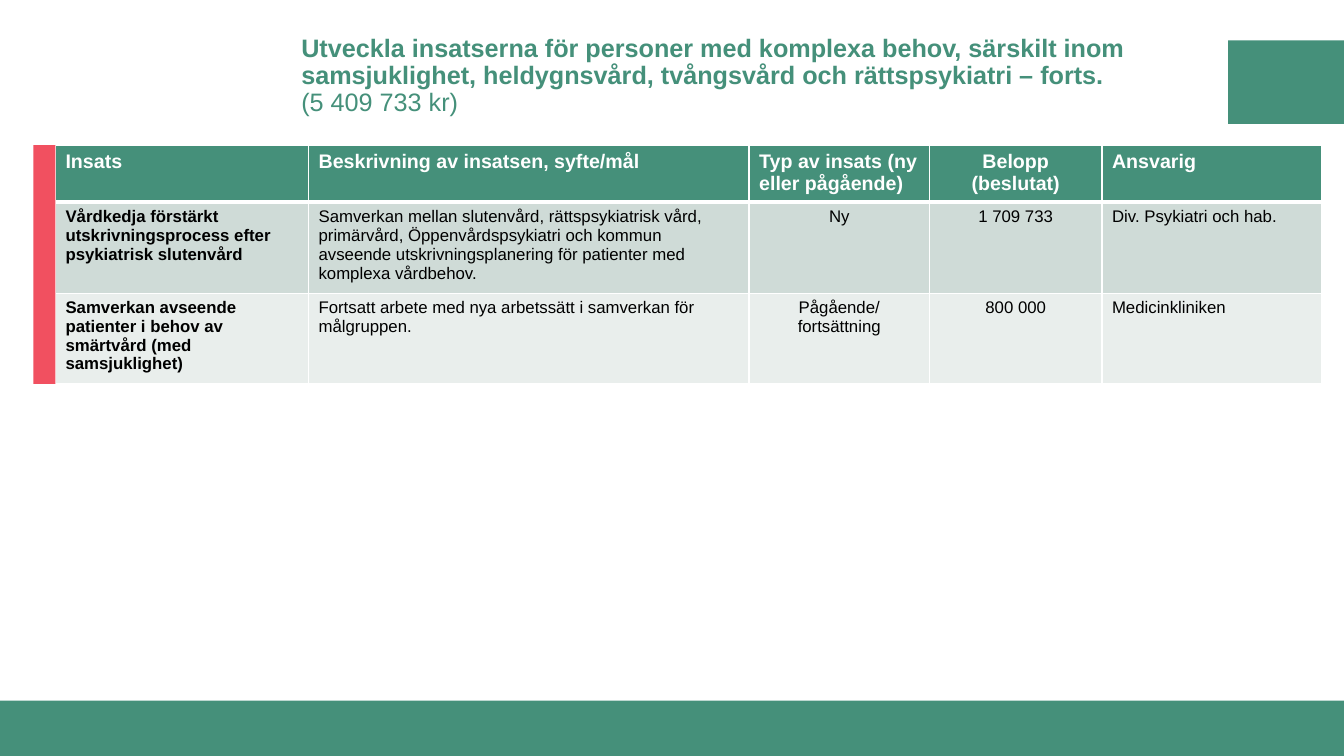
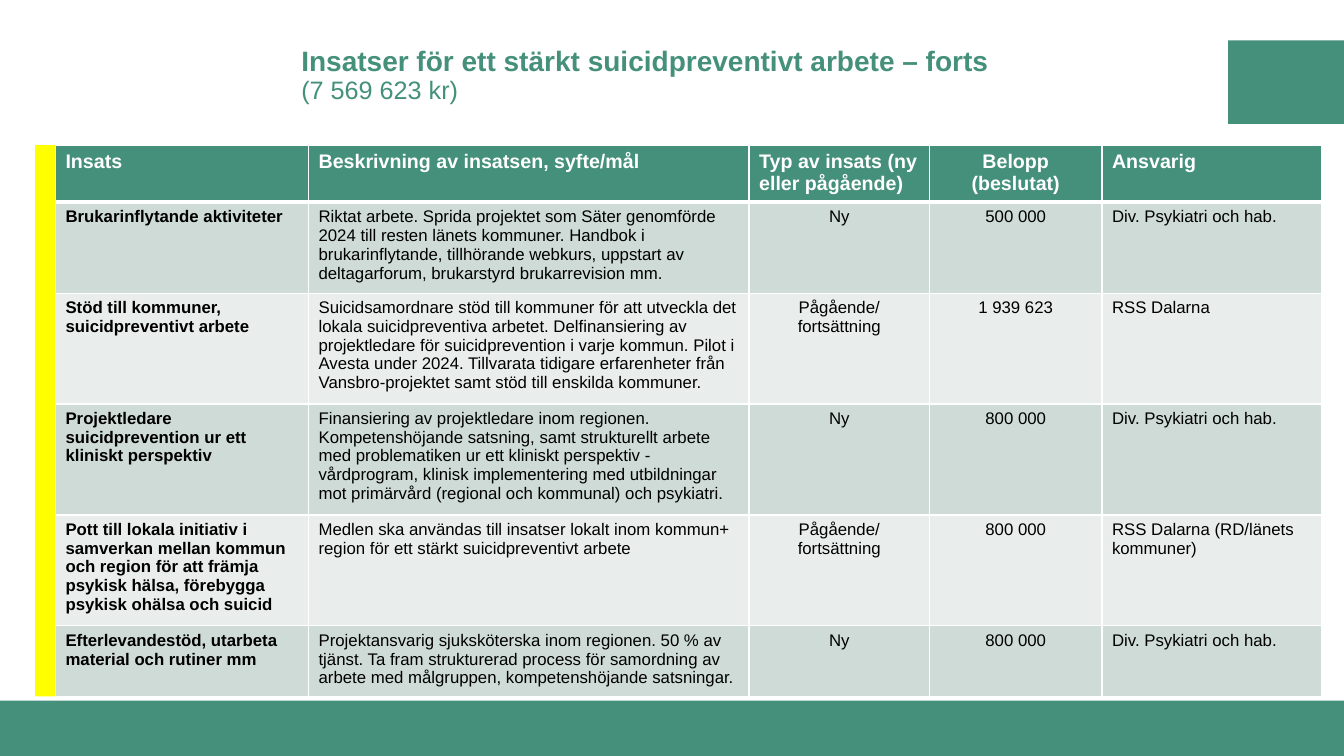
from pptx import Presentation
from pptx.dml.color import RGBColor
from pptx.enum.shapes import MSO_SHAPE as Shape
from pptx.enum.text import MSO_ANCHOR as Anchor, PP_ALIGN as Align
from pptx.oxml import parse_xml
from pptx.oxml.ns import nsdecls
from pptx.util import Inches, Pt

GREEN = RGBColor(0x45, 0x90, 0x7A)
RED = RGBColor(0xF1, 0x50, 0x60)
YELLOW = RGBColor(0xFF, 0xFF, 0x00)
DARK_ROW = RGBColor(0xCF, 0xDB, 0xD7)
LIGHT_ROW = RGBColor(0xE9, 0xEE, 0xEC)
WHITE = RGBColor(0xFF, 0xFF, 0xFF)
BLACK = RGBColor(0x00, 0x00, 0x00)

# Table layout shared by both slides
TABLE_LEFT, TABLE_TOP = 0.55, 1.44
COLUMN_WIDTHS = [2.51, 4.37, 1.79, 1.71, 2.18]
HEADER_HEIGHT = 0.54
HEADERS = ["Insats", "Beskrivning av insatsen, syfte/mål",
           "Typ av insats (ny eller pågående)", "Belopp (beslutat)", "Ansvarig"]
HEADER_CENTERED = {3}
BODY_CENTERED = {2, 3}

NEW = "Ny"
ONGOING = "Pågående/ fortsättning"
PSYCHIATRY = "Div. Psykiatri och hab."


class Report:
    """Holds the deck, its style and the current page."""

    font_name = "Arial"

    def __init__(self):
        self.deck = Presentation()
        self.deck.slide_width = Inches(13.33)
        self.deck.slide_height = Inches(7.5)
        self.page = None

    def add_page(self):
        self.page = self.deck.slides.add_slide(self.deck.slide_layouts[6])
        # Corner block and footer band
        self.add_block(12.18, 0.4, 1.15, 0.83, GREEN)
        self.add_block(0, 6.95, 13.33, 0.55, GREEN)

    def add_block(self, left, top, width, height, color):
        block = self.page.shapes.add_shape(
            Shape.RECTANGLE, Inches(left), Inches(top), Inches(width), Inches(height))
        block.shadow.inherit = False
        block.fill.solid()
        block.fill.fore_color.rgb = color
        block.line.fill.background()

    def add_span(self, para, text, color, **formats):
        span = para.add_run()
        span.text = text
        span.font.color.rgb = color
        for name, value in {"name": self.font_name, **formats}.items():
            setattr(span.font, name, value)

    def add_title(self, title, amount, size):
        box = self.page.shapes.add_textbox(
            Inches(2.89), Inches(0.28), Inches(9.2), Inches(0.95))
        frame = box.text_frame
        frame.word_wrap = True
        frame.vertical_anchor = Anchor.MIDDLE
        para = frame.paragraphs[0]
        para.line_spacing = 0.9
        self.add_span(para, title, GREEN, size=Pt(size), bold=True)
        para.add_line_break()
        self.add_span(para, amount, GREEN, size=Pt(18), bold=False)

    def add_borders(self, cell, top, bottom):
        properties = cell._tc.get_or_add_tcPr()
        for side, points in {"L": 1, "R": 1, "T": top, "B": bottom}.items():
            properties.append(parse_xml(
                f'<a:ln{side} {nsdecls("a")} w="{Pt(points)}"><a:solidFill>'
                f'<a:srgbClr val="{WHITE}"/></a:solidFill></a:ln{side}>'))

    def fill_cell(self, cell, text, fill, color, centered, **formats):
        cell.fill.solid()
        cell.fill.fore_color.rgb = fill
        para = cell.text_frame.paragraphs[0]
        para.alignment = Align.CENTER if centered else Align.LEFT
        self.add_span(para, text, color, **formats)

    def add_table(self, rows, row_heights):
        heights = [HEADER_HEIGHT, *row_heights]
        table = self.page.shapes.add_table(
            len(heights), len(HEADERS), Inches(TABLE_LEFT), Inches(TABLE_TOP),
            Inches(sum(COLUMN_WIDTHS)), Inches(sum(heights))).table
        for column, width in zip(table.columns, COLUMN_WIDTHS):
            column.width = Inches(width)
        for row, height in zip(table.rows, heights):
            row.height = Inches(height)
        for i, texts in enumerate([HEADERS, *rows]):
            for j, text in enumerate(texts):
                cell = table.cell(i, j)
                self.add_borders(cell, 3 if i == 1 else 1, 3 if i == 0 else 1)
                if i == 0:
                    self.fill_cell(cell, text, GREEN, WHITE, j in HEADER_CENTERED,
                                   size=Pt(14), bold=True)
                else:
                    self.fill_cell(cell, text, DARK_ROW if i % 2 else LIGHT_ROW, BLACK,
                                   j in BODY_CENTERED, size=Pt(12), bold=j == 0)

    def add_side_bar(self, width, height, color):
        self.add_block(TABLE_LEFT - width, TABLE_TOP, width, height, color)


def main():
    report = Report()

    # Complex needs
    report.add_page()
    report.add_title(
        "Utveckla insatserna för personer med komplexa behov, särskilt inom "
        "samsjuklighet, heldygnsvård, tvångsvård och rättspsykiatri – forts.",
        "(5 409 733 kr)", 18)
    report.add_table([
        ["Vårdkedja förstärkt utskrivningsprocess efter psykiatrisk slutenvård",
         "Samverkan mellan slutenvård, rättspsykiatrisk vård, primärvård, "
         "Öppenvårdspsykiatri och kommun avseende utskrivningsplanering för "
         "patienter med komplexa vårdbehov.",
         NEW, "1 709 733", PSYCHIATRY],
        ["Samverkan avseende patienter i behov av smärtvård (med samsjuklighet)",
         "Fortsatt arbete med nya arbetssätt i samverkan för målgruppen.",
         ONGOING, "800 000", "Medicinkliniken"],
    ], [0.84, 0.84])
    report.add_side_bar(0.22, 2.37, RED)

    # Suicide prevention
    report.add_page()
    report.add_title("Insatser för ett stärkt suicidpreventivt arbete – forts",
                     "(7 569 623 kr)", 20)
    report.add_table([
        ["Brukarinflytande aktiviteter",
         "Riktat arbete. Sprida projektet som Säter genomförde 2024 till resten "
         "länets kommuner. Handbok i brukarinflytande, tillhörande webkurs, "
         "uppstart av deltagarforum, brukarstyrd brukarrevision mm.",
         NEW, "500 000", PSYCHIATRY],
        ["Stöd till kommuner, suicidpreventivt arbete",
         "Suicidsamordnare stöd till kommuner för att utveckla det lokala "
         "suicidpreventiva arbetet. Delfinansiering av projektledare för "
         "suicidprevention i varje kommun. Pilot i Avesta under 2024. Tillvarata "
         "tidigare erfarenheter från Vansbro-projektet samt stöd till enskilda "
         "kommuner.",
         ONGOING, "1 939 623", "RSS Dalarna"],
        ["Projektledare suicidprevention ur ett kliniskt perspektiv",
         "Finansiering av projektledare inom regionen. Kompetenshöjande satsning, "
         "samt strukturellt arbete med problematiken ur ett kliniskt perspektiv - "
         "vårdprogram, klinisk implementering med utbildningar mot primärvård "
         "(regional och kommunal) och psykiatri.",
         NEW, "800 000", PSYCHIATRY],
        ["Pott till lokala initiativ i samverkan mellan kommun och region för att "
         "främja psykisk hälsa, förebygga psykisk ohälsa och suicid",
         "Medlen ska användas till insatser lokalt inom kommun+ region för ett "
         "stärkt suicidpreventivt arbete",
         ONGOING, "800 000", "RSS Dalarna (RD/länets kommuner)"],
        ["Efterlevandestöd, utarbeta material och rutiner mm",
         "Projektansvarig sjuksköterska inom regionen. 50 % av tjänst. Ta fram "
         "strukturerad process för samordning av arbete med målgruppen, "
         "kompetenshöjande satsningar.",
         NEW, "800 000", PSYCHIATRY],
    ], [0.84, 1.03, 1.03, 1.03, 0.66])
    report.add_side_bar(0.2, 5.47, YELLOW)

    report.deck.save("out.pptx")


if __name__ == "__main__":
    main()
